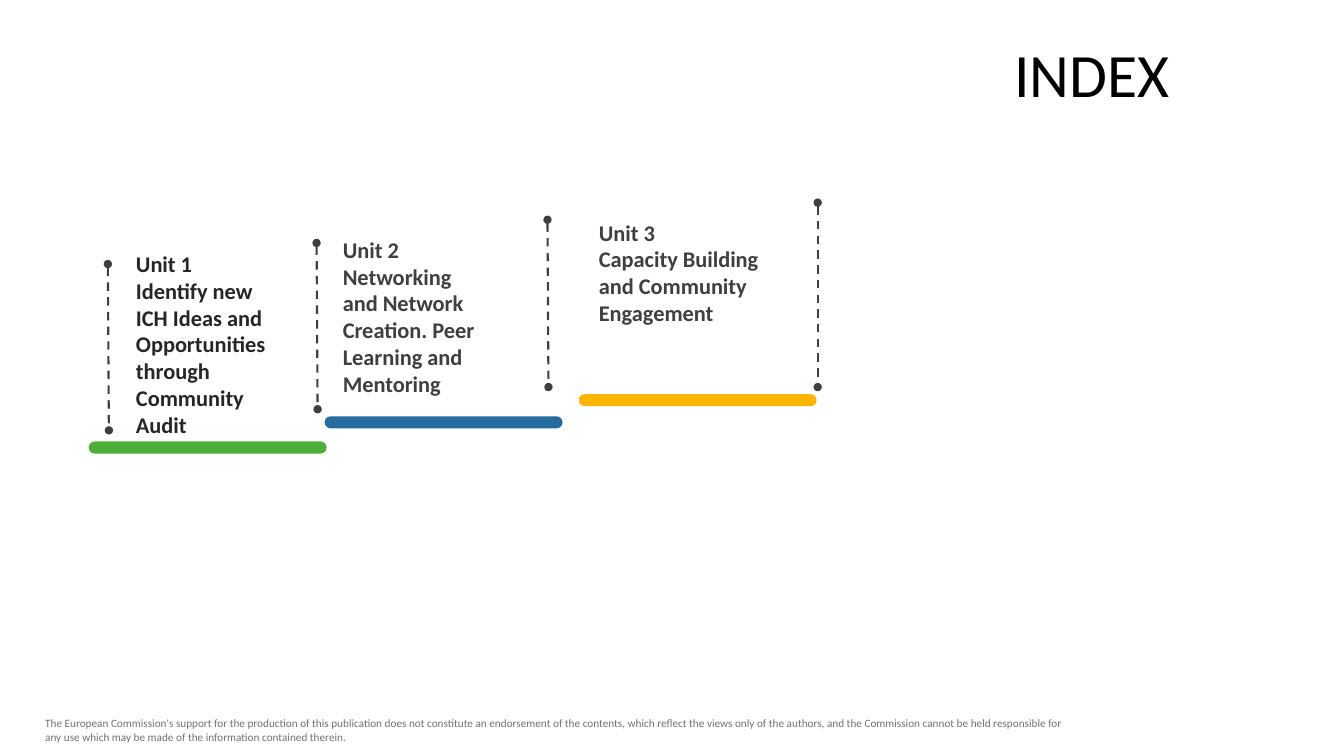
from dataclasses import dataclass

from lxml import etree
from pptx import Presentation
from pptx import util as u
from pptx.dml.color import RGBColor
from pptx.enum import dml, shapes, text
from pptx.oxml import ns


@dataclass(frozen=True)
class Theme:
    """Colours, font and type sizes of the slide."""

    font: str = "Calibri"
    black: str = "000000"
    dark: str = "262626"
    grey: str = "3F3F3F"
    muted: str = "757070"
    green: str = "4EAE3A"
    blue: str = "266C9F"
    yellow: str = "FFB500"
    title_size: int = 44
    unit_size: int = 16
    disclaimer_size: int = 8


THEME = Theme()

DISCLAIMER = (
    "The European Commission's support for the production of this publication "
    "does not constitute an endorsement of the contents, which reflect the views "
    "only of the authors, and the Commission cannot be held responsible for any "
    "use which may be made of the information contained therein."
)

UNITS = [
    (("Unit 1", "Identify new ICH Ideas and Opportunities through Community Audit"),
     (1.25, 2.43, 1.71, 1.99), 0.1, THEME.dark, (0.88, 4.38), THEME.green),
    (("Unit 2", "Networking and Network Creation. Peer Learning and Mentoring"),
     (3.28, 2.29, 1.64, 1.72), 0.12, THEME.grey, (3.22, 4.13), THEME.blue),
    (("Unit 3", "Capacity Building and Community Engagement"),
     (5.82, 2.12, 1.97, 1.18), 0.12, THEME.grey, (5.74, 3.91), THEME.yellow),
]

DIVIDERS = [
    (1.07, 2.62, 1.08, 4.27),
    (3.14, 2.41, 3.15, 4.06),
    (5.43, 2.18, 5.44, 3.84),
    (8.11, 2.01, 8.11, 3.84),
]


def inches(values):
    """Turn plain numbers into lengths."""
    return [u.Inches(value) for value in values]


def apply(target, formats):
    """Set every attribute named in the format values."""
    for name, value in formats.items():
        setattr(target, name, value)


def add_text(slide, lines, box, size, color, side_inset=0.1, bold=False,
             frame_formats=None, paragraph_formats=None):
    """Add a wrapping text box with one paragraph per line."""
    frame = slide.shapes.add_textbox(*inches(box)).text_frame
    apply(frame, {
        "word_wrap": True,
        "margin_left": u.Inches(side_inset),
        "margin_right": u.Inches(side_inset),
        **(frame_formats or {}),
    })
    frame.text = "\n".join(lines)
    for paragraph in frame.paragraphs:
        apply(paragraph, paragraph_formats or {})
        for run in paragraph.runs:
            apply(run.font, {"name": THEME.font, "size": u.Pt(size), "bold": bold})
            run.font.color.rgb = RGBColor.from_string(color)


def add_bar(slide, corner, color):
    """Add the rounded bar under a unit."""
    bar = slide.shapes.add_shape(
        shapes.MSO_SHAPE.ROUNDED_RECTANGLE, *inches((*corner, 2.36, 0.12)))
    bar.adjustments[0] = 0.5
    bar.shadow.inherit = False
    bar.fill.solid()
    bar.fill.fore_color.rgb = RGBColor.from_string(color)
    bar.line.fill.background()


def add_divider(slide, ends):
    """Add a dashed line with a dot at both ends."""
    divider = slide.shapes.add_connector(shapes.MSO_CONNECTOR.STRAIGHT, *inches(ends))
    divider.line.color.rgb = RGBColor.from_string(THEME.grey)
    apply(divider.line, {"width": u.Pt(1.5), "dash_style": dml.MSO_LINE.DASH})
    outline = divider.line._get_or_add_ln()
    for end in ("a:headEnd", "a:tailEnd"):
        etree.SubElement(outline, ns.qn(end), type="oval")
    etree.SubElement(divider._element.spPr, ns.qn("a:effectLst"))


def main():
    """Build the index slide and save it."""
    deck = Presentation()
    apply(deck, {"slide_width": u.Inches(13.33), "slide_height": u.Inches(7.5)})
    slide = deck.slides.add_slide(deck.slide_layouts[6])

    add_text(slide, [DISCLAIMER], (0.35, 7.06, 10.46, 0.37),
             THEME.disclaimer_size, THEME.muted)
    add_text(slide, ["INDEX"], (3.09, 0.37, 8.61, 0.79),
             THEME.title_size, THEME.black,
             frame_formats={"vertical_anchor": text.MSO_ANCHOR.MIDDLE},
             paragraph_formats={"alignment": text.PP_ALIGN.RIGHT, "line_spacing": 0.9})
    for lines, box, side_inset, text_color, bar_corner, bar_color in UNITS:
        add_bar(slide, bar_corner, bar_color)
        add_text(slide, lines, box, THEME.unit_size, text_color, side_inset, bold=True)
    for ends in DIVIDERS:
        add_divider(slide, ends)

    deck.save("out.pptx")


if __name__ == "__main__":
    main()
